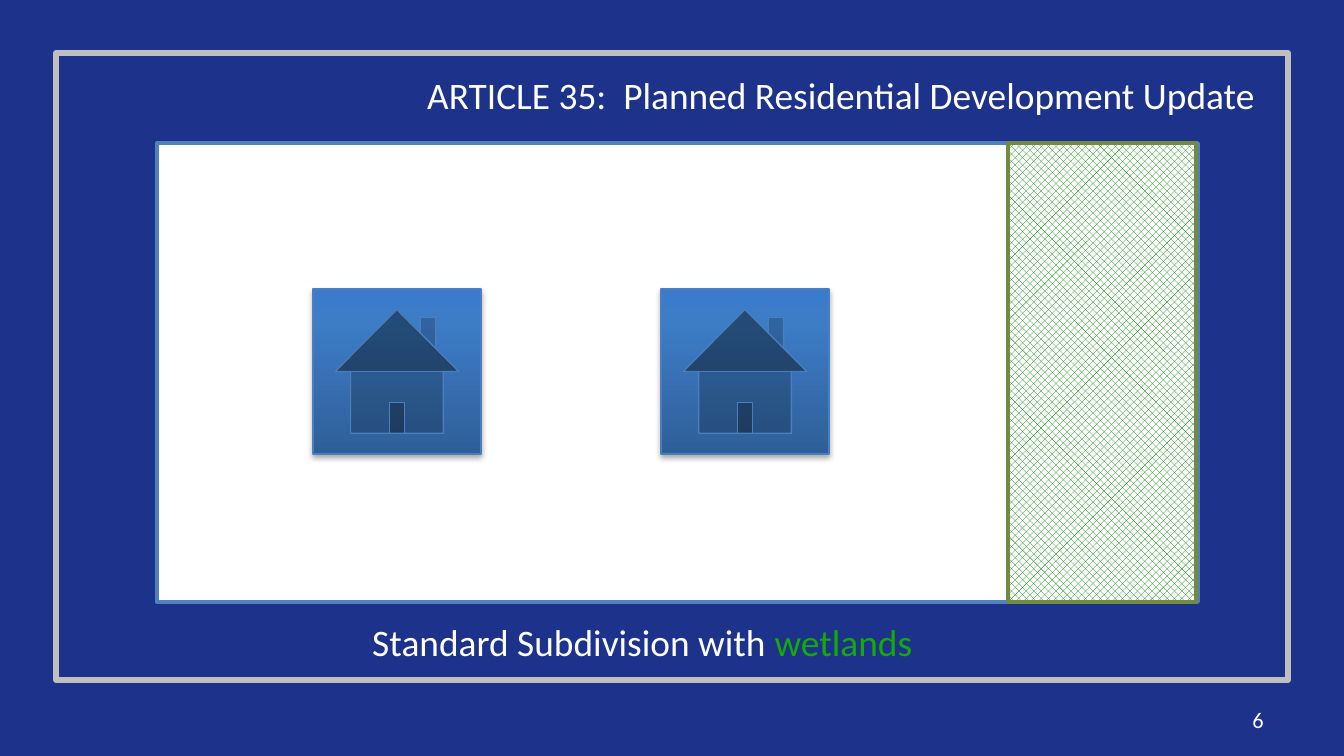
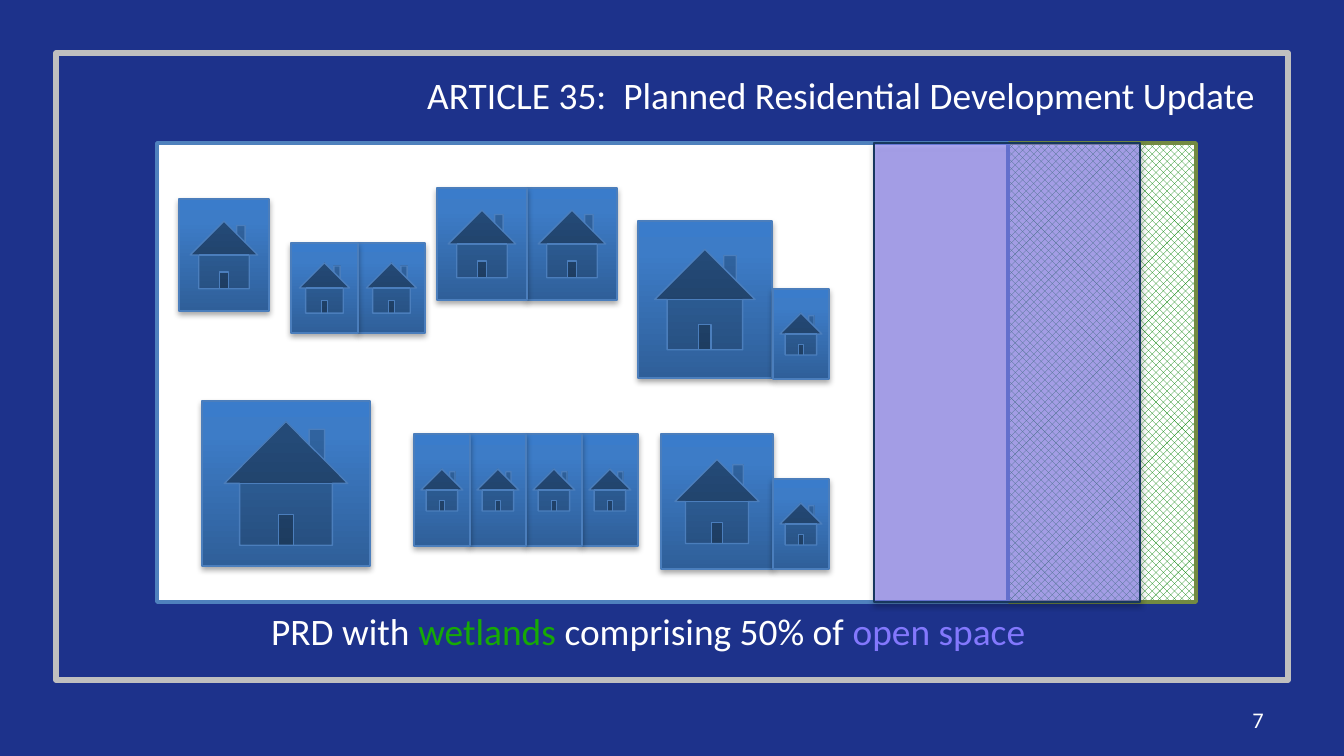
"""Build two slides that compare a standard subdivision with a planned one."""
import copy
import dataclasses

import lxml.etree
import pptx
import pptx.dml.color
import pptx.enum.dml
import pptx.enum.shapes
import pptx.enum.text
import pptx.oxml.ns
import pptx.shapes.autoshape
import pptx.slide
import pptx.text.text
import pptx.util

SCALE = 914400 / 134.4
FONT = "Calibri"
TITLE = "ARTICLE 35:  Planned Residential Development Update"
COLORS = {
    "navy": "1D328B",
    "frame": "BFBFBF",
    "white": "FFFFFF",
    "black": "000000",
    "lot": "4F81BD",
    "house": "4B7EBC",
    "hatch": "008000",
    "moss": "738A42",
    "green": "16AA05",
    "violet": "8378FD",
    "edge": "17375E",
    "dark": "2F5F99",
    "mid": "3D7CC7",
    "light": "3A7CCB",
}
SHADES = [(0, "dark"), (0.8, "mid"), (1, "light")]
SHAPES = pptx.enum.shapes.MSO_SHAPE


@dataclasses.dataclass(frozen=True)
class Box:
    """A place in px."""

    left: int
    top: int
    width: int
    height: int

    def emu(self) -> list[pptx.util.Emu]:
        """Return the four lengths in EMU."""
        return [pptx.util.Emu(round(px * SCALE)) for px in dataclasses.astuple(self)]


@dataclasses.dataclass(frozen=True)
class Row:
    """A row of equal houses that touch."""

    first: Box
    count: int = 1


@dataclasses.dataclass(frozen=True)
class Plan:
    """What differs from slide to slide."""

    number: int
    lot: Box
    rows: list[Row]
    label: Box
    runs: list[tuple[str, str]]
    open: Box | None = None


FRAME = Box(56, 53, 1232, 627)
HEAD = Box(414, 66, 863, 59)
FOOT = Box(963, 700, 314, 40)
WET = Box(1008, 143, 188, 459)

PLANS = [
    Plan(
        6,
        Box(157, 143, 1041, 459),
        [Row(Box(313, 289, 168, 165)), Row(Box(661, 289, 168, 165))],
        Box(359, 613, 573, 59),
        [("Standard Subdivision with ", "white"), ("wetlands", "green")],
    ),
    Plan(
        7,
        Box(157, 143, 851, 459),
        [
            Row(Box(179, 199, 90, 112)),
            Row(Box(202, 401, 168, 165)),
            Row(Box(414, 434, 56, 112), 4),
            Row(Box(661, 434, 112, 135)),
            Row(Box(638, 221, 134, 157)),
            Row(Box(773, 479, 56, 90)),
            Row(Box(437, 188, 90, 112), 2),
            Row(Box(291, 243, 67, 90), 2),
            Row(Box(773, 289, 56, 90)),
        ],
        Box(258, 602, 808, 59),
        [
            ("PRD with ", "white"),
            ("wetlands ", "green"),
            ("comprising 50% of ", "white"),
            ("open space", "violet"),
        ],
        Box(874, 143, 266, 459),
    ),
]


def color(name: str) -> pptx.dml.color.RGBColor:
    """Look up a colour."""
    return pptx.dml.color.RGBColor.from_string(COLORS[name])


def child(parent: lxml.etree._Element, tag: str, **attrs: str) -> lxml.etree._Element:
    """Add a drawing element to its parent."""
    return lxml.etree.SubElement(parent, pptx.oxml.ns.qn(tag), attrs)


def add_block(
    slide: pptx.slide.Slide,
    box: Box,
    line: str,
    weight: float,
    kind: SHAPES = SHAPES.RECTANGLE,
) -> pptx.shapes.autoshape.Shape:
    """Draw an unfilled shape with an outline and no shadow."""
    shape = slide.shapes.add_shape(kind, *box.emu())
    shape.shadow.inherit = False
    shape.fill.background()
    shape.line.color.rgb = color(line)
    shape.line.width = pptx.util.Pt(weight)
    return shape


def cast(shape: pptx.shapes.autoshape.Shape, alpha: int) -> None:
    """Give a shape a soft shadow below it."""
    effects = shape._element.spPr.find(pptx.oxml.ns.qn("a:effectLst"))
    outer = child(effects, "a:outerShdw", blurRad="40000", dist="22000",
                  dir="5400000", rotWithShape="0")
    tint = child(outer, "a:srgbClr", val=COLORS["black"])
    child(tint, "a:alpha", val=str(alpha * 1000))


def add_house(slide: pptx.slide.Slide, box: Box) -> None:
    """Draw one shaded house."""
    house = add_block(slide, box, "house", 0.75, SHAPES.ACTION_BUTTON_HOME)
    house.fill.gradient()
    house.fill.gradient_angle = 90
    stops = next(house._element.spPr.iter(pptx.oxml.ns.qn("a:gsLst")))
    stops.append(copy.deepcopy(stops[-1]))
    for stop, (place, shade) in zip(house.fill.gradient_stops, SHADES):
        stop.position = place
        stop.color.rgb = color(shade)
    cast(house, 35)


def add_row(slide: pptx.slide.Slide, row: Row) -> None:
    """Draw a row of houses from right to left."""
    first = row.first
    for index in reversed(range(row.count)):
        left = first.left + index * first.width
        add_house(slide, dataclasses.replace(first, left=left))


def add_lot(slide: pptx.slide.Slide, box: Box) -> None:
    """Draw the white lot."""
    lot = add_block(slide, box, "lot", 2)
    lot.fill.solid()
    lot.fill.fore_color.rgb = color("white")


def add_wet(slide: pptx.slide.Slide) -> None:
    """Draw the hatched wetlands."""
    wet = add_block(slide, WET, "moss", 2)
    wet.fill.patterned()
    wet.fill.pattern = pptx.enum.dml.MSO_PATTERN.LARGE_CHECKER_BOARD
    wet.fill.fore_color.rgb = color("hatch")
    wet.fill.back_color.rgb = color("white")


def add_open(slide: pptx.slide.Slide, box: Box) -> None:
    """Draw the see-through open space."""
    area = add_block(slide, box, "edge", 0.75)
    area.fill.solid()
    area.fill.fore_color.rgb = color("violet")
    tint = next(area._element.spPr.iter(pptx.oxml.ns.qn("a:srgbClr")))
    child(tint, "a:alpha", val="54000")
    cast(area, 38)


def add_text(
    slide: pptx.slide.Slide, box: Box, size: int, wrap: bool = True
) -> pptx.text.text.TextFrame:
    """Add an empty text box in the shared font."""
    frame = slide.shapes.add_textbox(*box.emu()).text_frame
    frame.word_wrap = wrap
    font = frame.paragraphs[0].font
    font.name = FONT
    font.size = pptx.util.Pt(size)
    font.color.rgb = color("white")
    return frame


def add_base(slide: pptx.slide.Slide, number: int) -> None:
    """Draw the frame, title and slide number."""
    add_block(slide, FRAME, "frame", 3)
    head = add_text(slide, HEAD, 20)
    head.auto_size = pptx.enum.text.MSO_AUTO_SIZE.SHAPE_TO_FIT_TEXT
    head.paragraphs[0].add_run().text = TITLE
    foot = add_text(slide, FOOT, 12)
    foot.vertical_anchor = pptx.enum.text.MSO_ANCHOR.MIDDLE
    foot.paragraphs[0].alignment = pptx.enum.text.PP_ALIGN.RIGHT
    foot.paragraphs[0].add_run().text = str(number)


def add_label(slide: pptx.slide.Slide, plan: Plan) -> None:
    """Write the caption in its colours."""
    label = add_text(slide, plan.label, 20, wrap=False)
    label.auto_size = pptx.enum.text.MSO_AUTO_SIZE.SHAPE_TO_FIT_TEXT
    for text, tint in plan.runs:
        run = label.paragraphs[0].add_run()
        run.text = text
        run.font.color.rgb = color(tint)


def add_plan(deck: pptx.presentation.Presentation, plan: Plan) -> None:
    """Build one slide."""
    slide = deck.slides.add_slide(deck.slide_layouts[6])
    slide.background.fill.solid()
    slide.background.fill.fore_color.rgb = color("navy")
    add_base(slide, plan.number)
    if plan.open:
        add_wet(slide)
        add_lot(slide, plan.lot)
    else:
        add_lot(slide, plan.lot)
        add_wet(slide)
    for row in plan.rows:
        add_row(slide, row)
    if plan.open:
        add_open(slide, plan.open)
    add_label(slide, plan)


def main() -> None:
    """Build and save the deck."""
    deck = pptx.Presentation()
    deck.slide_width, deck.slide_height = Box(0, 0, 1344, 756).emu()[2:]
    for plan in PLANS:
        add_plan(deck, plan)
    deck.save("out.pptx")


if __name__ == "__main__":
    main()
